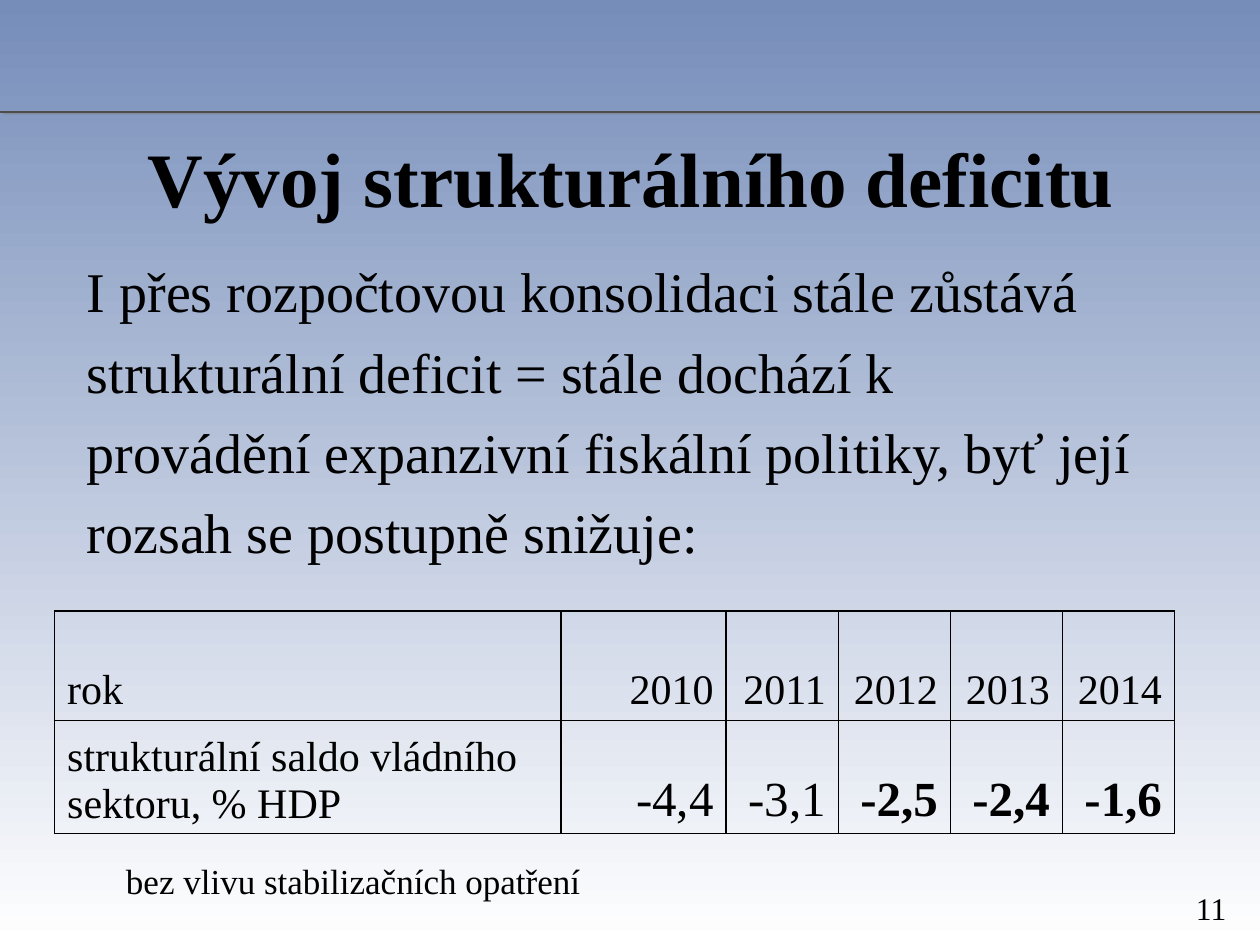
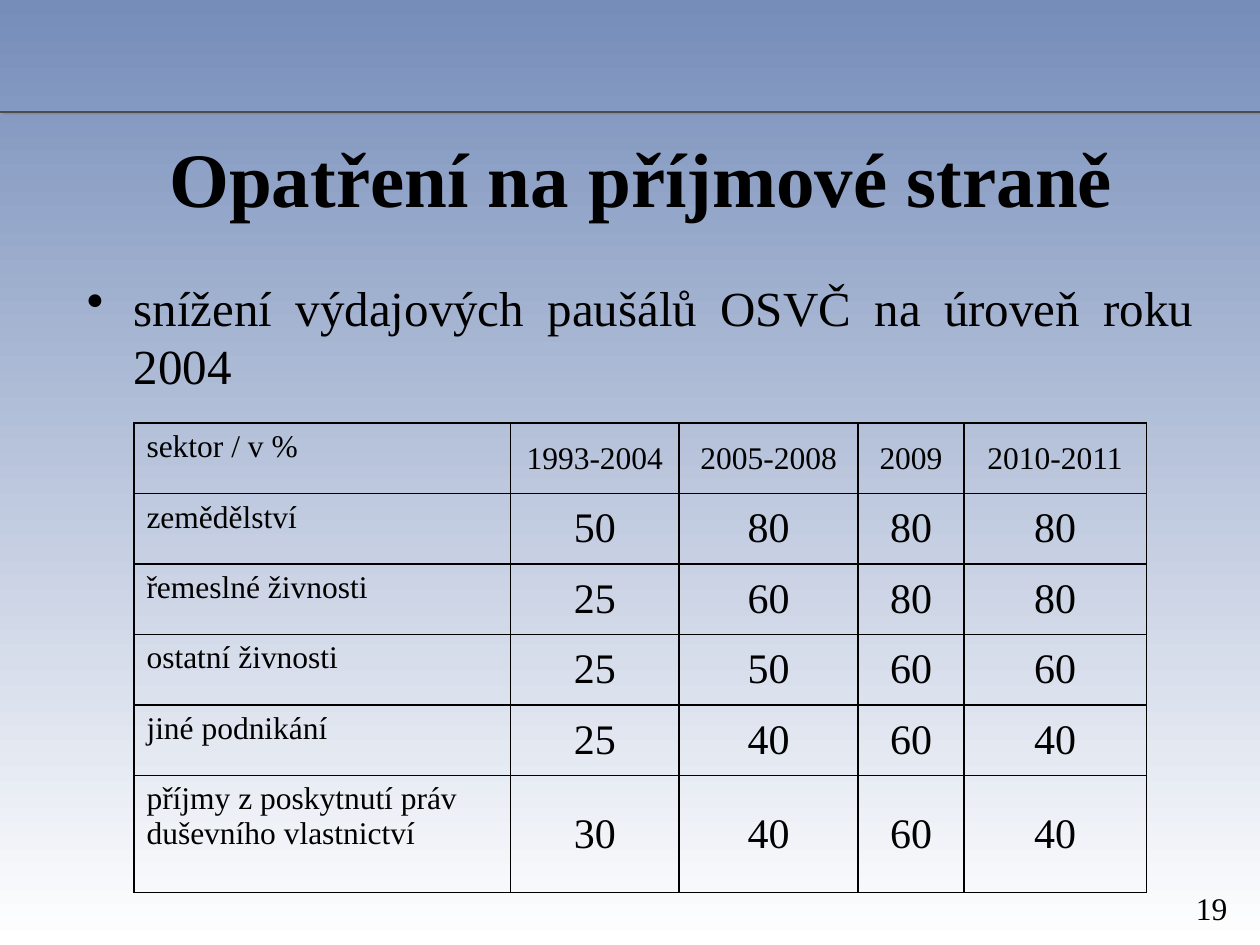
from dataclasses import dataclass
from typing import Any, Optional

from lxml.etree import SubElement
from pptx import Presentation
from pptx.dml.color import RGBColor
from pptx.enum.shapes import MSO_CONNECTOR
from pptx.enum.text import MSO_ANCHOR, PP_ALIGN
from pptx.oxml import parse_xml
from pptx.oxml.ns import nsdecls, qn
from pptx.util import Cm, Pt


@dataclass(frozen=True)
class Theme:
    font: str = "Times New Roman"
    ink: str = "000000"
    sky: str = "768DBA"
    paper: str = "FFFFFF"
    rule: str = "4D4D4D"
    shadow: str = "808080"
    title: int = 44
    lead: int = 32
    point: int = 28
    large_figure: int = 28
    figure: int = 24
    note: int = 20
    small: int = 18
    lead_gap: float = 7.5
    hanging: float = 0.95


THEME = Theme()


@dataclass(frozen=True)
class Frame:
    """Position and size in centimetres."""
    left: float
    top: float
    width: float
    height: float

    def lengths(self) -> list[Cm]:
        return [Cm(value) for value in (self.left, self.top, self.width, self.height)]


@dataclass(frozen=True)
class TextStyle:
    size: int
    align: PP_ALIGN = PP_ALIGN.JUSTIFY
    bold: bool = False
    gap: float = 0
    hanging: bool = True
    bullet: Optional[str] = None


@dataclass(frozen=True)
class Grid:
    """A table whose first row holds headings and first column holds labels."""
    left: float
    top: float
    columns: list[float]
    rows: list[float]
    cells: list[list[str]]
    label_size: int
    value_size: int
    value_align: PP_ALIGN
    label_anchor: MSO_ANCHOR
    value_anchor: MSO_ANCHOR
    bold_from: int


@dataclass(frozen=True)
class Page:
    number: int
    title: str
    title_left: float
    body: str
    body_frame: Frame
    body_style: TextStyle
    grid: Grid
    note: str = ""


TITLE_STYLE = TextStyle(THEME.title, PP_ALIGN.CENTER, bold=True, hanging=False)
NUMBER_FRAME = Frame(22.91, 17.8, 2.79, 1.02)
NOTE_FRAME = Frame(2.29, 17.2, 18.39, 1.1)

PAGES = [
    Page(
        number=11,
        title="Vývoj strukturálního deficitu",
        title_left=1.3,
        body="I přes rozpočtovou konsolidaci stále zůstává\n"
             "strukturální deficit = stále dochází k\n"
             "provádění expanzivní fiskální politiky, byť její\n"
             "rozsah se postupně snižuje:",
        body_frame=Frame(1.5, 5.05, 23.22, 11.4),
        body_style=TextStyle(THEME.lead, gap=THEME.lead_gap),
        grid=Grid(
            left=1.1, top=12.32,
            columns=[10.21, 3.33] + [2.26] * 4,
            rows=[2.2] * 2,
            cells=[
                ["rok", "2010", "2011", "2012", "2013", "2014"],
                ["strukturální saldo vládního\nsektoru, % HDP",
                 "-4,4", "-3,1", "-2,5", "-2,4", "-1,6"],
            ],
            label_size=THEME.figure, value_size=THEME.large_figure,
            value_align=PP_ALIGN.RIGHT,
            label_anchor=MSO_ANCHOR.BOTTOM, value_anchor=MSO_ANCHOR.BOTTOM,
            bold_from=3,
        ),
        note="bez vlivu stabilizačních opatření",
    ),
    Page(
        number=19,
        title="Opatření na příjmové straně",
        title_left=1.5,
        body="snížení výdajových paušálů OSVČ na úroveň roku 2004",
        body_frame=Frame(1.5, 5.46, 22.81, 12.8),
        body_style=TextStyle(THEME.point, bullet="•"),
        grid=Grid(
            left=2.7, top=8.53,
            columns=[7.59, 3.4, 3.61, 2.13, 3.68],
            rows=[1.42] * 5 + [2.36],
            cells=[
                ["sektor / v %", "1993‑2004", "2005‑2008", "2009", "2010-2011"],
                ["zemědělství", "50", "80", "80", "80"],
                ["řemeslné živnosti", "25", "60", "80", "80"],
                ["ostatní živnosti", "25", "50", "60", "60"],
                ["jiné podnikání", "25", "40", "60", "40"],
                ["příjmy z poskytnutí práv\nduševního vlastnictví",
                 "30", "40", "60", "40"],
            ],
            label_size=THEME.small, value_size=THEME.figure,
            value_align=PP_ALIGN.CENTER,
            label_anchor=MSO_ANCHOR.TOP, value_anchor=MSO_ANCHOR.MIDDLE,
            bold_from=5,
        ),
    ),
]


def set_values(target: Any, values: dict[str, Any]) -> None:
    for name, value in values.items():
        setattr(target, name, value)


def write(text_frame: Any, text: str, style: TextStyle) -> None:
    """Fill a text frame with one paragraph per line of text."""
    for index, line in enumerate(text.split("\n")):
        para = text_frame.paragraphs[0] if index == 0 else text_frame.add_paragraph()
        properties = para._p.get_or_add_pPr()
        if style.hanging:
            properties.set("marL", str(Cm(THEME.hanging)))
            properties.set("indent", str(-Cm(THEME.hanging)))
        if style.bullet:
            SubElement(properties, qn("a:buChar"), char=style.bullet)
        else:
            SubElement(properties, qn("a:buNone"))
        para.alignment = style.align
        if index and style.gap:
            para.space_before = Pt(style.gap)
        span = para.add_run()
        span.text = line
        set_values(span.font, {"name": THEME.font, "size": Pt(style.size), "bold": style.bold})
        span.font.color.rgb = RGBColor.from_string(THEME.ink)


def add_text(slide: Any, frame: Frame, text: str, style: TextStyle,
             anchor: MSO_ANCHOR = MSO_ANCHOR.TOP) -> None:
    box = slide.shapes.add_textbox(*frame.lengths())
    set_values(box.text_frame, {"word_wrap": True, "vertical_anchor": anchor})
    write(box.text_frame, text, style)


def outline_cell(cell: Any) -> None:
    """Give a clear cell a thin line on all four sides."""
    cell.fill.background()
    properties = cell._tc.get_or_add_tcPr()
    for index, side in enumerate(("lnL", "lnR", "lnT", "lnB")):
        properties.insert(index, parse_xml(
            f'<a:{side} {nsdecls("a")} w="{Pt(1)}"><a:solidFill>'
            f'<a:srgbClr val="{THEME.ink}"/></a:solidFill></a:{side}>'))


def add_grid(slide: Any, grid: Grid) -> None:
    frame = Frame(grid.left, grid.top, sum(grid.columns), sum(grid.rows))
    table = slide.shapes.add_table(len(grid.rows), len(grid.columns), *frame.lengths()).table
    set_values(table, {"first_row": False, "horz_banding": False})
    for column, width in zip(table.columns, grid.columns):
        column.width = Cm(width)
    for row, height in zip(table.rows, grid.rows):
        row.height = Cm(height)
    for row_index, texts in enumerate(grid.cells):
        for column_index, text in enumerate(texts):
            cell = table.cell(row_index, column_index)
            is_label = column_index == 0
            is_value = row_index > 0 and not is_label
            outline_cell(cell)
            cell.vertical_anchor = grid.label_anchor if is_label else grid.value_anchor
            write(cell.text_frame, text, TextStyle(
                size=grid.value_size if is_value else grid.label_size,
                align=PP_ALIGN.LEFT if is_label else grid.value_align,
                bold=is_value and column_index >= grid.bold_from))


def add_rule(slide: Any, width: int) -> None:
    rule = slide.shapes.add_connector(MSO_CONNECTOR.STRAIGHT, 0, Cm(2.26), width, Cm(2.26))
    rule.line.width = Pt(1)
    rule.line.color.rgb = RGBColor.from_string(THEME.rule)
    rule._element.spPr.append(parse_xml(
        f'<a:effectLst {nsdecls("a")}><a:outerShdw dist="{Pt(2.2)}" dir="{27 * 60000}">'
        f'<a:srgbClr val="{THEME.shadow}"><a:alpha val="50000"/></a:srgbClr>'
        '</a:outerShdw></a:effectLst>'))


def paint_background(deck: Any) -> None:
    fill = deck.slide_master.background.fill
    fill.gradient()
    fill.gradient_angle = 270
    for stop, color in zip(fill.gradient_stops, (THEME.sky, THEME.paper)):
        stop.color.rgb = RGBColor.from_string(color)


def add_page(deck: Any, page: Page) -> None:
    slide = deck.slides.add_slide(deck.slide_layouts[6])
    add_rule(slide, deck.slide_width)
    add_text(slide, NUMBER_FRAME, f"\t{page.number}", TextStyle(THEME.small))
    add_text(slide, Frame(page.title_left, 2.13, 22.86, 2.87), page.title,
             TITLE_STYLE, MSO_ANCHOR.MIDDLE)
    add_text(slide, page.body_frame, page.body, page.body_style)
    add_grid(slide, page.grid)
    if page.note:
        add_text(slide, NOTE_FRAME, page.note, TextStyle(THEME.note))


def main() -> None:
    deck = Presentation()
    set_values(deck, {"slide_width": Cm(25.4), "slide_height": Cm(19.05)})
    paint_background(deck)
    for page in PAGES:
        add_page(deck, page)
    deck.save("out.pptx")


if __name__ == "__main__":
    main()
